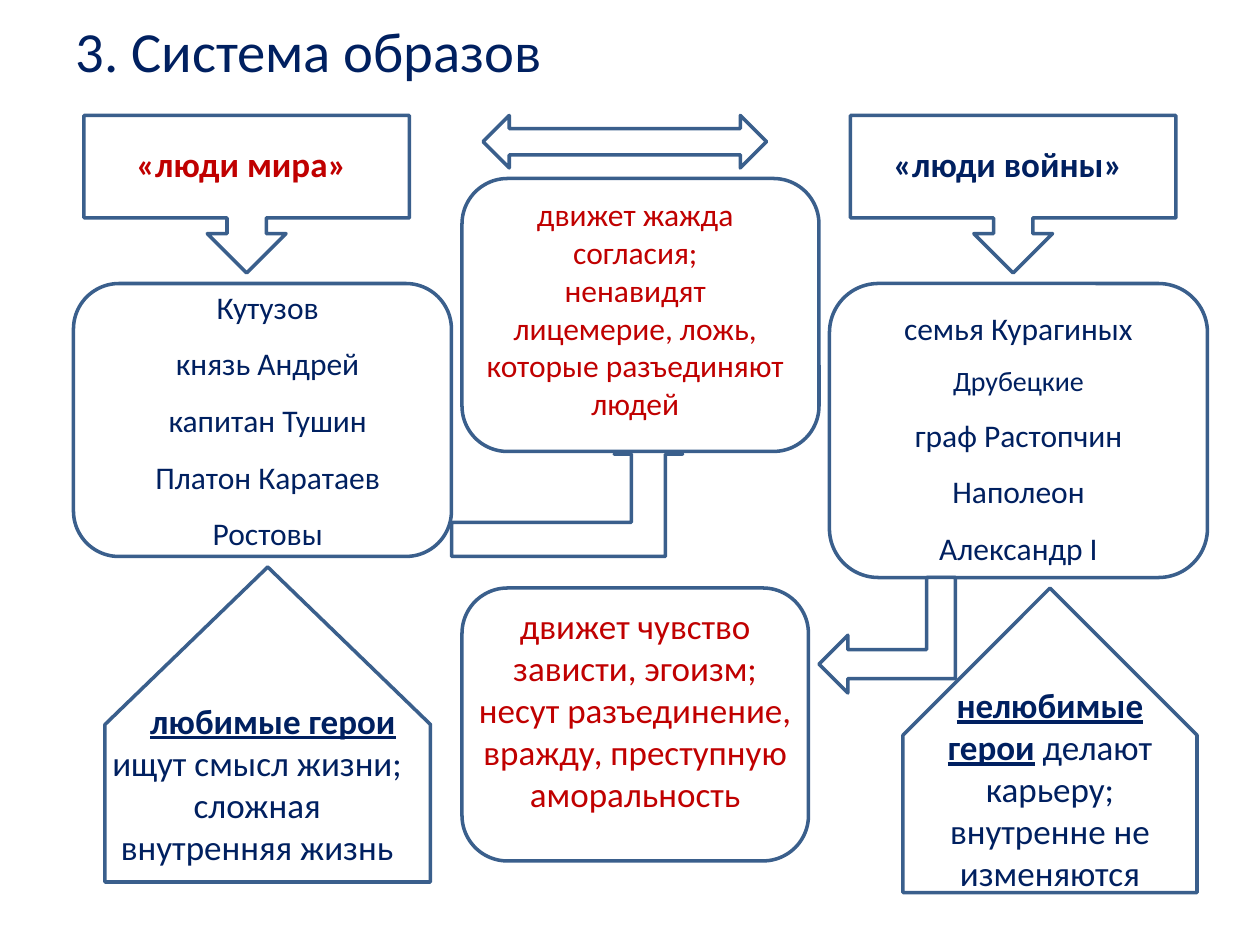
from dataclasses import dataclass

from pptx import Presentation
from pptx.dml.color import RGBColor
from pptx.enum.shapes import MSO_SHAPE
from pptx.enum.text import MSO_ANCHOR, PP_ALIGN
from pptx.util import Inches, Length, Pt

NAVY = RGBColor(0x00, 0x20, 0x60)
RED = RGBColor(0xC0, 0x00, 0x00)
WHITE = RGBColor(0xFF, 0xFF, 0xFF)
OUTLINE = RGBColor(0x3A, 0x5F, 0x8C)
FONT = "Calibri"
COLUMNS, ROWS = 120, 90
SIDE_SHIFT = 73  # columns from a "peace" callout to its "war" counterpart


@dataclass
class Box:
    """A place on the grid of 120 columns by 90 rows."""
    col: float
    row: float
    cols: float
    rows: float


@dataclass
class Figure:
    kind: MSO_SHAPE
    box: Box
    rotation: int = 0
    flipped: bool = False


@dataclass
class Line:
    """A paragraph, with an optional bold lead-in."""
    text: str
    size: float = 20
    lead: str = ""
    bold: bool = False
    indent: float = 0


@dataclass
class Label:
    box: Box
    lines: list[Line]
    color: RGBColor = NAVY
    spacing: float = 1


CALLOUT, ROUND = MSO_SHAPE.DOWN_ARROW_CALLOUT, MSO_SHAPE.ROUNDED_RECTANGLE
BENT, HOUSE = MSO_SHAPE.BENT_UP_ARROW, MSO_SHAPE.PENTAGON

FIGURES = [
    Figure(CALLOUT, Box(8, 11, 31, 15)),
    Figure(CALLOUT, Box(8 + SIDE_SHIFT, 11, 31, 15)),
    Figure(MSO_SHAPE.LEFT_RIGHT_ARROW, Box(46, 11, 27, 5)),
    Figure(ROUND, Box(7, 27, 36, 26)),
    Figure(ROUND, Box(79, 27, 36, 28)),
    Figure(BENT, Box(43, 40, 22, 13)),
    Figure(ROUND, Box(44, 17, 34, 26)),
    Figure(BENT, Box(79, 54, 11, 13), rotation=90, flipped=True),
    Figure(ROUND, Box(44, 56, 33, 26)),
    Figure(HOUSE, Box(10.5, 53.5, 30, 31), rotation=270),
    Figure(HOUSE, Box(85.5, 56.5, 29, 28), rotation=270),
]

LABELS = [
    Label(Box(10, 13, 26, 5.25), [Line("«люди мира»", bold=True)], RED),
    Label(Box(10 + SIDE_SHIFT, 13, 26, 5.25), [Line("«люди войны»", bold=True)]),
    Label(Box(11, 25, 29, 28.5),
          [Line(name, 18) for name in ("Кутузов", "князь Андрей", "капитан Тушин",
                                       "Платон Каратаев", "Ростовы")],
          spacing=1.5),
    Label(Box(78, 27, 38, 28),
          [Line("семья Курагиных", 18), Line("Друбецкие", 16), Line("граф Растопчин", 18),
           Line("Наполеон", 18), Line("Александр I", 18)],
          spacing=1.5),
    Label(Box(45, 18, 31, 23),
          [Line("движет жажда согласия;", 18),
           Line("ненавидят лицемерие, ложь, которые разъединяют людей", 18)], RED),
    Label(Box(44, 57, 33, 21.5),
          [Line("движет чувство зависти, эгоизм;"),
           Line("несут разъединение, вражду, преступную аморальность")], RED),
    Label(Box(9, 66, 31, 17.5),
          [Line("", lead="любимые герои", indent=0.25),
           Line("ищут смысл жизни; сложная внутренняя жизнь")]),
    Label(Box(86, 64.5, 28, 21.5),
          [Line(" делают карьеру; внутренне не изменяются", lead="нелюбимые герои")]),
]


def place(prs, box: Box) -> tuple[Length, ...]:
    col, row = prs.slide_width / COLUMNS, prs.slide_height / ROWS
    return tuple(Length(round(v)) for v in
                 (box.col * col, box.row * row, box.cols * col, box.rows * row))


def draw_figure(prs, s, figure: Figure) -> None:
    sp = s.shapes.add_shape(figure.kind, *place(prs, figure.box))
    sp.shadow.inherit = False
    sp.fill.solid()
    sp.fill.fore_color.rgb = WHITE
    sp.line.color.rgb = OUTLINE
    sp.line.width = Pt(2)
    sp.rotation = figure.rotation
    if figure.flipped:
        sp._element.spPr.get_or_add_xfrm().set("flipV", "1")


def draw_label(prs, s, label: Label) -> None:
    tf = s.shapes.add_textbox(*place(prs, label.box)).text_frame
    tf.word_wrap = True
    for i, line in enumerate(label.lines):
        p = tf.add_paragraph() if i else tf.paragraphs[0]
        if line.indent:
            p._p.get_or_add_pPr().set("marL", str(Inches(line.indent)))
        p.alignment = PP_ALIGN.CENTER
        p.line_spacing = label.spacing
        p.font.name, p.font.size = FONT, Pt(line.size)
        p.font.color.rgb = label.color
        p.font.bold = line.bold
        if line.lead:
            r = p.add_run()
            r.text = line.lead
            r.font.bold = r.font.underline = True
        if line.text:
            p.add_run().text = line.text


def draw_title(prs, s, text: str) -> None:
    sp = s.shapes.title
    sp.left, sp.top, sp.width, sp.height = place(prs, Box(6, 1, 108, 7.5))
    tf = sp.text_frame
    tf.text = text
    tf.vertical_anchor = MSO_ANCHOR.MIDDLE
    p = tf.paragraphs[0]
    p.alignment = PP_ALIGN.LEFT
    p.font.name, p.font.size = FONT, Pt(32.4)
    p.font.color.rgb = NAVY


def main() -> None:
    prs = Presentation()
    prs.slide_width, prs.slide_height = Inches(10), Inches(7.5)
    s = prs.slides.add_slide(prs.slide_layouts[5])
    draw_title(prs, s, "3. Система образов")
    for figure in FIGURES:
        draw_figure(prs, s, figure)
    for label in LABELS:
        draw_label(prs, s, label)
    prs.save("out.pptx")


if __name__ == "__main__":
    main()
